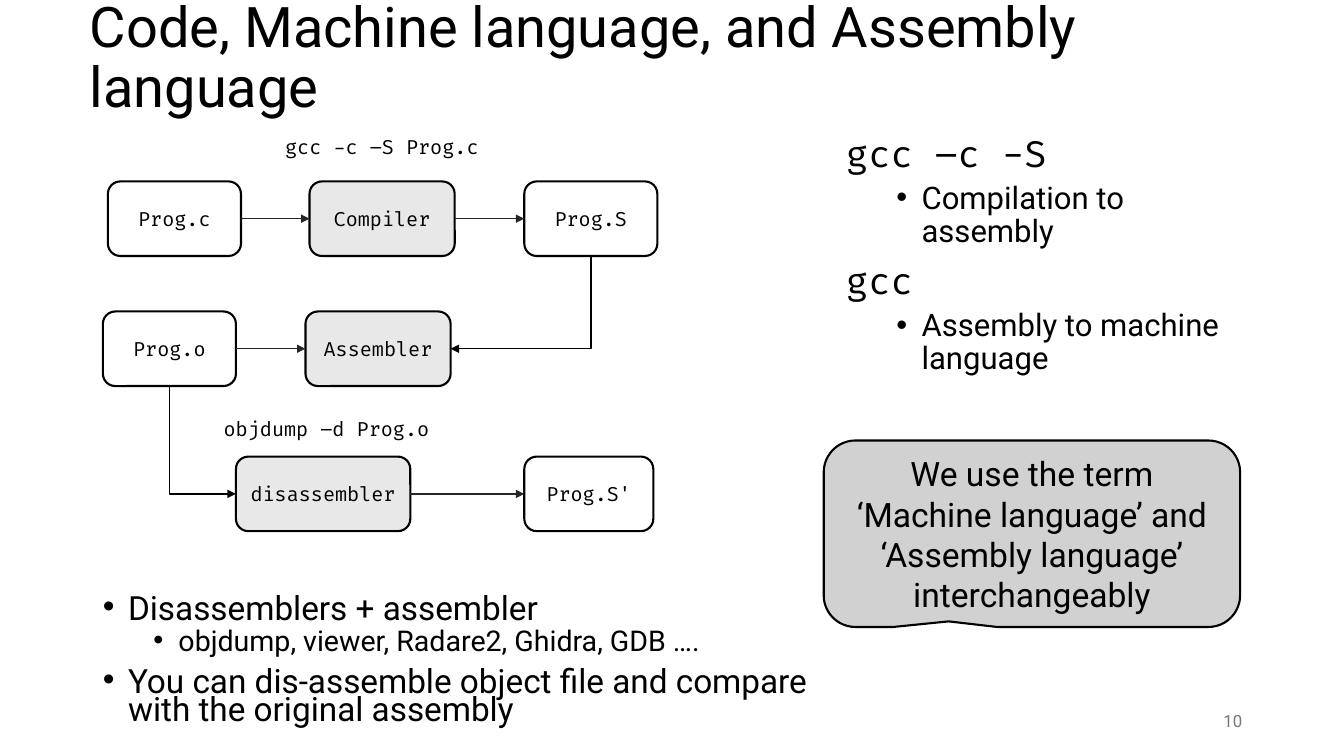
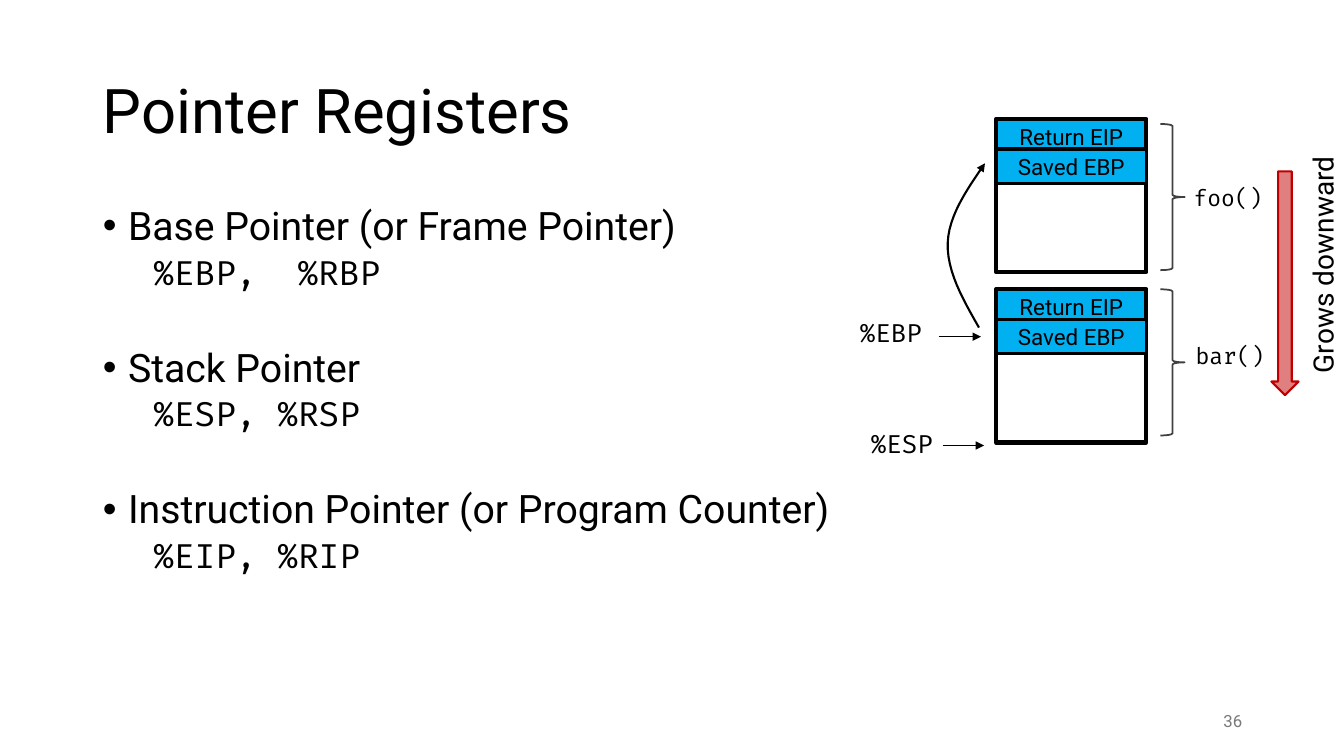
from lxml import etree
from pptx import Presentation
from pptx import util as u
from pptx.dml import color
from pptx.enum import shapes, text
from pptx.oxml import ns

COLORS = {
    "ink": "000000", "number": "797979", "tool": "E8E8E8", "note": "D1D1D1",
    "arrow": "262626", "brace": "404040", "stack": "00B0F0", "grow": "C00000",
}
SANS, MONO = "Roboto", "Fira Code"
KIND = shapes.MSO_SHAPE
ALIGN = text.PP_ALIGN
MIDDLE = text.MSO_ANCHOR.MIDDLE
TOP = text.MSO_ANCHOR.TOP

prs = Presentation()
prs.slide_width, prs.slide_height = u.Inches(13.33), u.Inches(7.5)
CELL = prs.slide_height / 75


def write(p, words, size, font=SANS, ink="ink", align=ALIGN.LEFT):
    p.alignment = align
    for i, line in enumerate(words.split("\n")):
        if i:
            p.add_line_break()
        r = p.add_run()
        r.text = line
        r.font.size = u.Pt(size)
        r.font.name = font
        r.font.color.rgb = color.RGBColor.from_string(COLORS[ink])
    return r


def box(s, kind, grid, words="", size=14, font=SANS, fill=None, line="ink",
        width=1.5, ink="ink", align=None, anchor=TOP):
    place = [round(v * CELL) for v in grid]
    if kind is None:
        sp = s.shapes.add_textbox(*place)
    else:
        sp = s.shapes.add_shape(kind, *place)
        sp.shadow.inherit = False
        sp.line.color.rgb = color.RGBColor.from_string(COLORS[line])
        sp.line.width = u.Pt(width)
        if fill:
            sp.fill.solid()
            sp.fill.fore_color.rgb = color.RGBColor.from_string(COLORS[fill])
        else:
            sp.fill.background()
    tf = sp.text_frame
    tf.word_wrap = True
    tf.vertical_anchor = anchor if kind is None else MIDDLE
    if words:
        align = align or (ALIGN.LEFT if kind is None else ALIGN.CENTER)
        write(tf.paragraphs[0], words, size, font, ink, align)
    return sp


slides = []
for layout, title, grid, size, number in [
    (3, "Code, Machine language, and Assembly language", (7.9, 1.5, 115, 8.8), 40, "10"),
    (1, "Pointer Registers", (9.2, 4, 115, 14.5), 44, "36"),
]:
    s = prs.slides.add_slide(prs.slide_layouts[layout])
    sp = s.shapes.title
    sp.left, sp.top, sp.width, sp.height = [round(v * CELL) for v in grid]
    tf = sp.text_frame
    tf.auto_size = text.MSO_AUTO_SIZE.NONE
    tf.vertical_anchor = MIDDLE
    tf.paragraphs[0].line_spacing = 0.9
    write(tf.paragraphs[0], title, size)
    box(s, None, (94.2, 69.5, 30, 4), number, 12, ink="number", align=ALIGN.RIGHT, anchor=MIDDLE)
    slides.append(s)
code, registers = slides

STYLES = {
    "command": (0, 0, 0, "", 25.9, MONO, 10),
    "meaning": (1, 0.75, -0.25, "•", 22.2, SANS, 5),
    "point": (0, 0.25, -0.25, "•", 23.8, SANS, 10),
    "detail": (1, 0.75, -0.25, "•", 20.4, SANS, 5),
    "pointer": (0, 0.25, -0.25, "•", 28, SANS, 40),
    "names": (1, 0.5, 0, "", 24, MONO, 5),
}
for s, slot, grid, spacing, entries in [
    (code, 1, (82.9, 13, 43.3, 23.6), 0.9, [
        ("command", "gcc –c -S"),
        ("meaning", "Compilation to assembly"),
        ("command", "gcc"),
        ("meaning", "Assembly to machine language"),
    ]),
    (code, 2, (9.2, 58.8, 72.5, 14.9), 0.7, [
        ("point", "Disassemblers + assembler"),
        ("detail", "objdump, viewer, Radare2, Ghidra, GDB …."),
        ("point", "You can dis-assemble object file and compare with the original assembly"),
    ]),
    (registers, 1, (9.2, 20, 75.1, 47.6), 0.9, [
        ("pointer", "Base Pointer (or Frame Pointer)"),
        ("names", "%EBP,"),
        ("pointer", "Stack Pointer"),
        ("names", "%ESP, %RSP"),
        ("pointer", "Instruction Pointer (or Program Counter)"),
        ("names", "%EIP, %RIP"),
    ]),
]:
    sp = s.placeholders[slot]
    sp.left, sp.top, sp.width, sp.height = [round(v * CELL) for v in grid]
    tf = sp.text_frame
    tf.auto_size = text.MSO_AUTO_SIZE.NONE
    for i, (style, words) in enumerate(entries):
        level, margin, indent, bullet, size, font, before = STYLES[style]
        p = tf.add_paragraph() if i else tf.paragraphs[0]
        p.level = level
        pPr = p._p.get_or_add_pPr()
        pPr.set("marL", str(u.Inches(margin)))
        pPr.set("indent", str(u.Inches(indent)))
        if bullet:
            etree.SubElement(pPr, ns.qn("a:buFont"), typeface="Arial")
            etree.SubElement(pPr, ns.qn("a:buChar"), char=bullet)
        else:
            etree.SubElement(pPr, ns.qn("a:buNone"))
        p.line_spacing = spacing
        p.space_before = u.Pt(before if i else 0)
        write(p, words, size, font)
        if words == "%EBP,":
            gap = write(p, " ", size, font)
            gap._r.get_or_add_rPr().set("spc", "1440")
            write(p, "%RBP", size, font)

sp = box(code, KIND.ROUNDED_RECTANGULAR_CALLOUT, (81.7, 43.7, 41.3, 18.5),
         "We use the term\n‘Machine language’ and\n‘Assembly language’ interchangeably",
         24, fill="note")
for i, value in enumerate((-0.2, 0.47, 0.17)):
    sp.adjustments[i] = value

steps = {}
for name, col, row, width, fill in [
    ("Prog.c", 10.7, 18, 13.2, None),
    ("Compiler", 30.7, 18, 14.4, "tool"),
    ("Prog.S", 52, 18, 13.2, None),
    ("Prog.o", 10.2, 30.9, 13.2, None),
    ("Assembler", 30.3, 30.9, 14.4, "tool"),
    ("disassembler", 23.4, 45.3, 17.3, "tool"),
    ("Prog.S'", 52, 45.3, 12.8, None),
]:
    steps[name] = box(code, KIND.ROUNDED_RECTANGLE, (col, row, width, 7.4), name, font=MONO, fill=fill)

for words, col, row in [("gcc -c –S Prog.c", 27.3, 12.9), ("objdump –d Prog.o", 21.2, 40.9)]:
    box(code, None, (col, row, 28.5, 3.4), words, font=MONO)

arrows = []
LEFT, BOTTOM, RIGHT = 1, 2, 3
for start, start_side, end, end_side in [
    ("Prog.c", RIGHT, "Compiler", LEFT),
    ("Compiler", RIGHT, "Prog.S", LEFT),
    ("Prog.o", RIGHT, "Assembler", LEFT),
    ("disassembler", RIGHT, "Prog.S'", LEFT),
    ("Assembler", RIGHT, "Prog.S", BOTTOM),
    ("disassembler", LEFT, "Prog.o", BOTTOM),
]:
    bent = end_side == BOTTOM
    kind = shapes.MSO_CONNECTOR.ELBOW if bent else shapes.MSO_CONNECTOR.STRAIGHT
    sp = code.shapes.add_connector(kind, 0, 0, 0, 0)
    sp.begin_connect(steps[start], start_side)
    sp.end_connect(steps[end], end_side)
    if bent:
        sp.element.spPr.find(ns.qn("a:prstGeom")).set("prst", "bentConnector2")
    arrows.append((sp, "ink" if bent else "arrow", 1, "headEnd" if bent else "tailEnd"))

for top, brace, label, label_col, label_row in [
    (11.8, 12.3, "foo()", 117.4, 17.8),
    (28.7, 28.7, "bar()", 117.6, 33.5),
]:
    for shift, height, words, fill, width in [
        (5.7, 9.5, "", None, 3),
        (0, 3.4, "Return EIP", "stack", 3),
        (3, 3.4, "Saved EBP", "stack", 2.5),
    ]:
        box(registers, KIND.RECTANGLE, (98.8, top + shift, 14.9, height), words, 16, fill=fill, width=width)
    box(registers, KIND.RIGHT_BRACE, (115.1, brace, 2.4, 14.5), line="brace", width=1.25)
    box(registers, None, (label_col, label_row, 10, 3.7), label, 16, MONO)

for words, col, row, start, end, level in [
    ("%EBP", 84.3, 31, 93.1, 97.3, 33.4),
    ("%ESP", 85.4, 42, 93.5, 97.6, 44.2),
]:
    box(registers, None, (col, row, 9.5, 4), words, 18, MONO)
    ends = [round(v * CELL) for v in (start, level, end, level)]
    sp = registers.shapes.add_connector(shapes.MSO_CONNECTOR.STRAIGHT, *ends)
    arrows.append((sp, "ink", 1, "tailEnd"))

curves = [
    [(97.1, 32.5), (95.5, 29.7), (93.9, 26.9), (94, 24.1)],
    [(94, 24.1), (94.1, 21.4), (95.9, 18.8), (97.7, 16.2)],
]
points = []
for a, b, c, d in curves:
    for step in range(13):
        t = step / 12
        points.append([
            round(CELL * ((1 - t) ** 3 * a[k] + 3 * (1 - t) ** 2 * t * b[k]
                          + 3 * (1 - t) * t ** 2 * c[k] + t ** 3 * d[k]))
            for k in (0, 1)
        ])
builder = registers.shapes.build_freeform(*points[0])
builder.add_line_segments(points[1:], close=False)
sp = builder.convert_to_shape()
sp.fill.background()
sp.shadow.inherit = False
arrows.append((sp, "ink", 1.5, "tailEnd"))

sp = box(registers, KIND.DOWN_ARROW, (126.1, 17, 2.7, 22.2), fill="grow", line="grow")
tint = sp.element.spPr.find(ns.qn("a:solidFill")).find(ns.qn("a:srgbClr"))
etree.SubElement(tint, ns.qn("a:alpha"), val="50000")
sp = box(registers, None, (116.9, 21.5, 28.6, 4.4), "Grows downward", 20)
sp.rotation = 270

for sp, ink, width, end in arrows:
    sp.line.color.rgb = color.RGBColor.from_string(COLORS[ink])
    sp.line.width = u.Pt(width)
    spPr = sp.element.spPr
    etree.SubElement(spPr.find(ns.qn("a:ln")), ns.qn("a:" + end), type="triangle")
    if spPr.find(ns.qn("a:effectLst")) is None:
        etree.SubElement(spPr, ns.qn("a:effectLst"))

prs.save("out.pptx")
